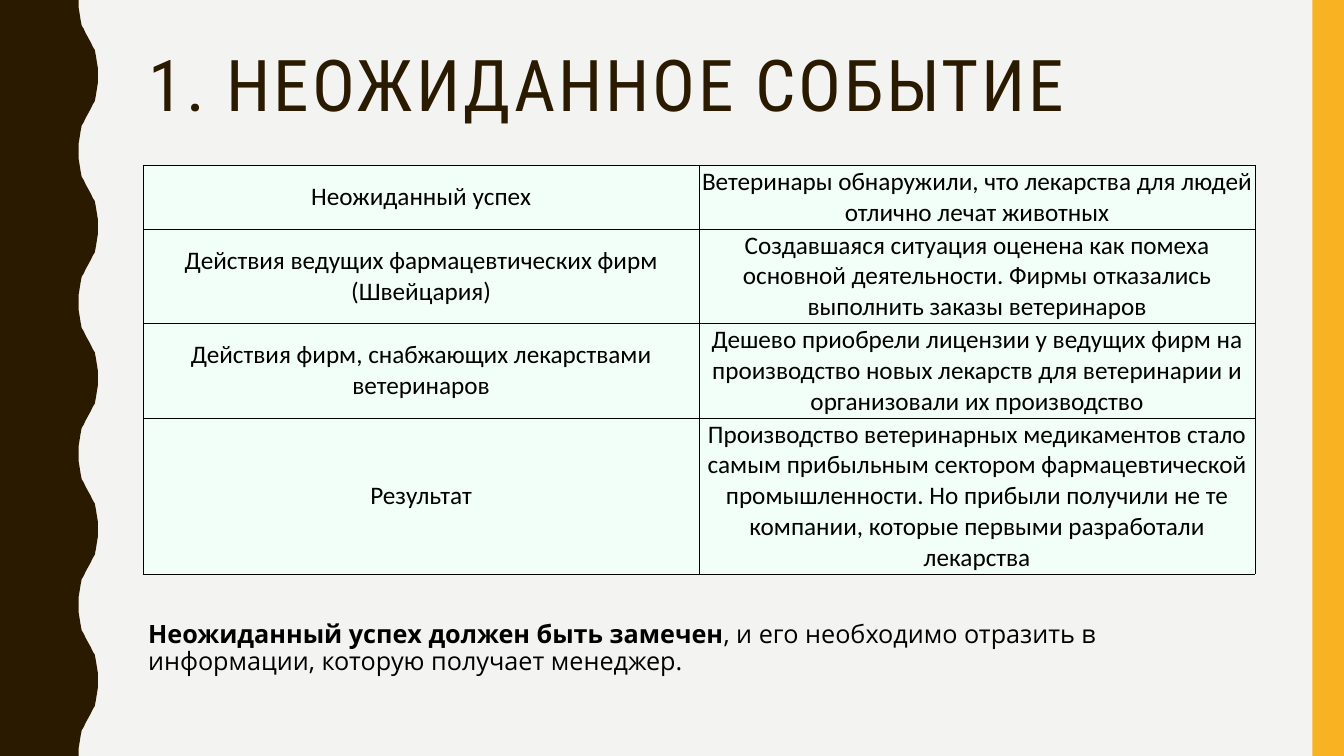
from dataclasses import dataclass

from lxml import etree
from pptx import Presentation
from pptx import util as u
from pptx.dml.color import RGBColor
from pptx.enum import shapes, text
from pptx.oxml import ns

WIDE, HIGH = u.Inches(13.33), u.Inches(7.5)
HUES = {
    "paper": "F3F3F2",
    "bark": "2A1A00",
    "gold": "F8B323",
    "mint": "F2FFF8",
    "ink": "000000",
}
WAVES = 5
LOW, PEAK = 5.85, 7.28
CURVE = [(0, 0), (0, 0.05), (0.05, 0.09), (0.1, 0.13),
         (0.16, 0.17), (0.26, 0.19), (0.37, 0.22), (0.5, 0.25)]
EDGES = ("a:lnL", "a:lnR", "a:lnT", "a:lnB")
ROWS = [
    (8.13, "Неожиданный успех",
     "Ветеринары обнаружили, что лекарства для людей отлично лечат животных"),
    (12.13, "Действия ведущих фармацевтических фирм (Швейцария)",
     "Создавшаяся ситуация оценена как помеха основной деятельности. "
     "Фирмы отказались выполнить заказы ветеринаров"),
    (12.13, "Действия фирм, снабжающих лекарствами ветеринаров",
     "Дешево приобрели лицензии у ведущих фирм на производство новых лекарств "
     "для ветеринарии и организовали их производство"),
    (20, "Результат",
     "Производство ветеринарных медикаментов стало самым прибыльным сектором "
     "фармацевтической промышленности. Но прибыли получили не те компании, "
     "которые первыми разработали лекарства"),
]


@dataclass(frozen=True)
class Run:
    words: str
    face: str
    size: float
    hue: str = "ink"
    bold: bool = False
    track: int = 0


@dataclass(frozen=True)
class Block:
    left: float
    top: float
    width: float
    height: float
    runs: tuple[Run, ...]


BLOCKS = [
    Block(10.28, 5.9, 83.48, 21.43,
          (Run("1. НЕОЖИДАННОЕ СОБЫТИЕ", "Roboto Condensed", 51, "bark", track=200),)),
    Block(10.28, 81.6, 83.48, 9.47,
          (Run("Неожиданный успех должен быть замечен", "Open Sans", 18, bold=True),
           Run(", и его необходимо отразить в информации, которую получает менеджер.",
               "Open Sans", 18))),
]


def across(share: float) -> int:
    return round(WIDE * share / 100)


def down(share: float) -> int:
    return round(HIGH * share / 100)


def apply(thing, style: dict) -> None:
    for name, value in style.items():
        setattr(thing, name, value)


def paint(fill, hue: str) -> None:
    fill.solid()
    fill.fore_color.rgb = RGBColor.from_string(HUES[hue])


def plain(shape, hue: str) -> None:
    shape.shadow.inherit = False
    paint(shape.fill, hue)
    shape.line.fill.background()


def write(para, item: Run) -> None:
    run = para.add_run()
    run.text = item.words
    apply(run.font, {"name": item.face, "size": u.Pt(item.size), "bold": item.bold})
    run.font.color.rgb = RGBColor.from_string(HUES[item.hue])
    if item.track:
        run.font._element.set("spc", str(item.track))


def draw_wave(slide) -> None:
    rise = CURVE + [(1 - x, 0.5 - y) for x, y in reversed(CURVE)]
    cycle = rise + [(x, 1 - y) for x, y in reversed(rise)]
    edge = [(across(LOW + (PEAK - LOW) * x), down(100 * (wave + y) / WAVES))
            for wave in range(WAVES) for x, y in cycle]
    form = slide.shapes.build_freeform(0, 0)
    form.add_line_segments(edge + [(0, HIGH)], close=True)
    plain(form.convert_to_shape(), "bark")


def draw_bar(slide) -> None:
    bar = slide.shapes.add_shape(shapes.MSO_SHAPE.RECTANGLE,
                                 across(97.65), 0, across(2.35), HIGH)
    plain(bar, "gold")


def draw_block(slide, block: Block) -> None:
    box = slide.shapes.add_textbox(across(block.left), down(block.top),
                                   across(block.width), down(block.height))
    apply(box.text_frame, {"word_wrap": True,
                           "vertical_anchor": text.MSO_ANCHOR.TOP})
    para = box.text_frame.paragraphs[0]
    para.line_spacing = 0.9
    for item in block.runs:
        write(para, item)


def rule_cell(cell) -> None:
    props = cell._tc.get_or_add_tcPr()
    for place, edge in enumerate(EDGES):
        line = etree.Element(ns.qn(edge), w=str(u.Pt(0.6)))
        fill = etree.SubElement(line, ns.qn("a:solidFill"))
        etree.SubElement(fill, ns.qn("a:srgbClr"), val=HUES["ink"])
        props.insert(place, line)


def draw_table(slide) -> None:
    frame = slide.shapes.add_table(len(ROWS), 2, across(10.65), down(21.87),
                                   across(82.73), down(sum(row[0] for row in ROWS)))
    table = frame.table
    apply(table, {"first_row": False, "horz_banding": False})
    sides = ("left", "right", "top", "bottom")
    style = {f"margin_{side}": across(0.08) for side in sides}
    style["vertical_anchor"] = text.MSO_ANCHOR.MIDDLE
    for line, (height, *words) in enumerate(ROWS):
        table.rows[line].height = down(height)
        for col, phrase in enumerate(words):
            cell = table.cell(line, col)
            apply(cell, style)
            paint(cell.fill, "mint")
            rule_cell(cell)
            para = cell.text_frame.paragraphs[0]
            para.alignment = text.PP_ALIGN.CENTER
            write(para, Run(phrase, "Calibri", 18))


def main() -> None:
    deck = Presentation()
    apply(deck, {"slide_width": WIDE, "slide_height": HIGH})
    slide = deck.slides.add_slide(deck.slide_layouts[6])
    paint(slide.background.fill, "paper")
    draw_wave(slide)
    draw_bar(slide)
    draw_table(slide)
    for block in BLOCKS:
        draw_block(slide, block)
    deck.save("out.pptx")


if __name__ == "__main__":
    main()
